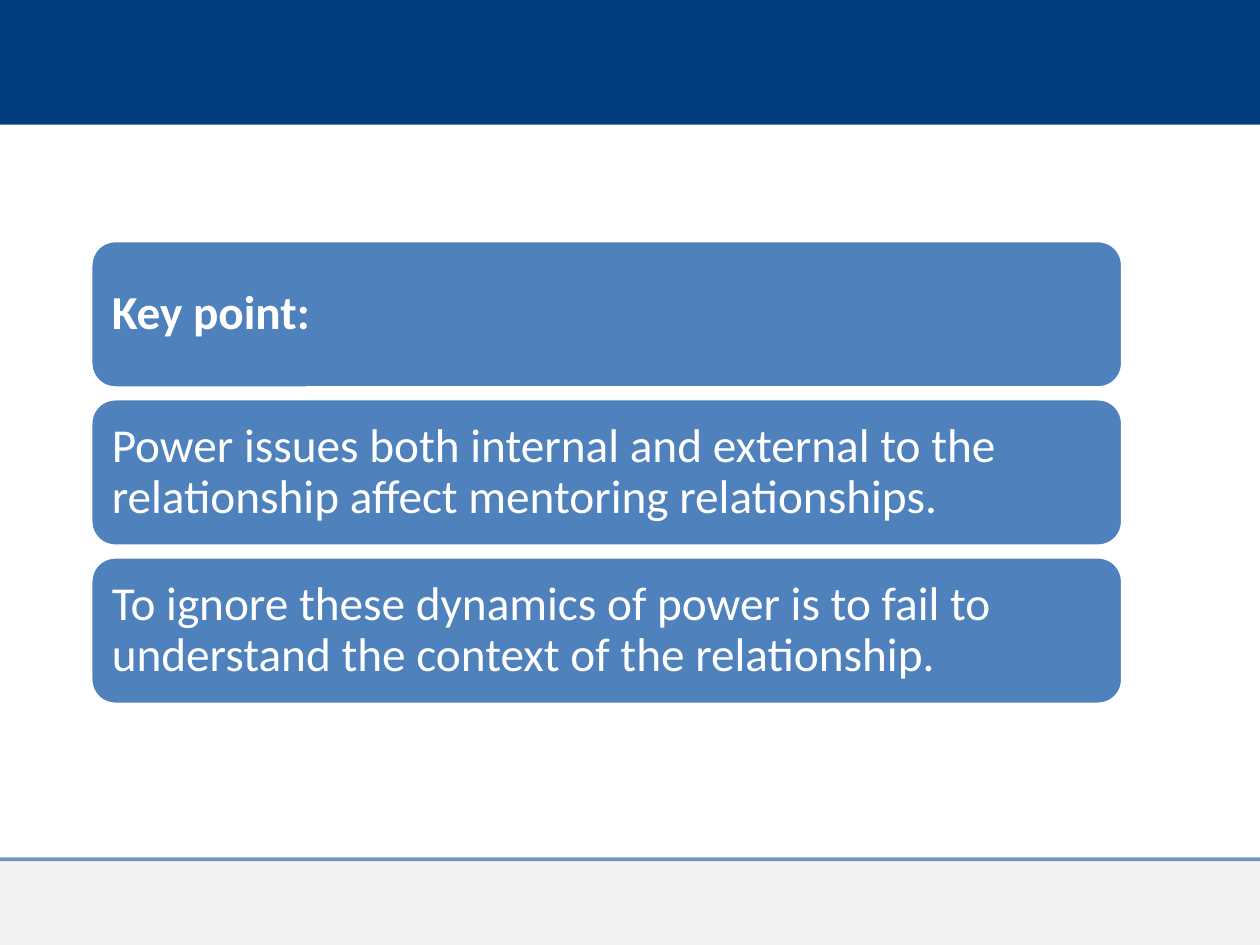
from dataclasses import dataclass

from lxml.etree import SubElement
from pptx import Presentation
from pptx.dml.color import RGBColor
from pptx.enum.shapes import MSO_CONNECTOR, MSO_SHAPE
from pptx.enum.text import MSO_ANCHOR, PP_ALIGN
from pptx.oxml.ns import qn
from pptx.util import Inches, Pt


@dataclass(frozen=True)
class Theme:
    """Colours, font and type size of the slide."""
    navy: str = "003E7E"
    grey: str = "808080"
    card: str = "4F81BD"
    white: str = "FFFFFF"
    font: str = "Calibri"
    body: int = 27


THEME = Theme()
WIDTH, HEIGHT = 10, 7.5
HEADER_H, FOOTER_Y = 0.99, 6.82
CARD_X, CARD_W, CARD_H = 0.72, 8.19, 1.17
STACK_Y, STACK_H = 1.91, 3.68
POINTS = [
    ("Key point:", True),
    ("Power issues both internal and external to the relationship "
     "affect mentoring relationships.", False),
    ("To ignore these dynamics of power is to fail to understand "
     "the context of the relationship.", False),
]


def set_opacity(fill, percent):
    """Make a solid fill partly transparent."""
    color = fill._xPr.find(qn("a:solidFill"))[0]
    SubElement(color, qn("a:alpha")).set("val", str(percent * 1000))


def add_box(s, kind, x, y, w, h, color):
    """Add a filled shape without line or shadow."""
    sp = s.shapes.add_shape(kind, Inches(x), Inches(y), Inches(w), Inches(h))
    sp.shadow.inherit = False
    sp.fill.solid()
    sp.fill.fore_color.rgb = RGBColor.from_string(color)
    sp.line.fill.background()
    return sp


def add_rule(s, y, color, width, opacity):
    """Add a horizontal line across the slide."""
    line = s.shapes.add_connector(
        MSO_CONNECTOR.STRAIGHT, 0, Inches(y), Inches(WIDTH), Inches(y))
    line.line.width = Pt(width)
    line.line.color.rgb = RGBColor.from_string(color)
    set_opacity(line.line.fill, opacity)
    SubElement(line._element.spPr, qn("a:effectLst"))


def write(sp, text, *, size=THEME.body, color=THEME.white, bold=False,
          spacing=0.9, inset=0.11):
    """Write left-aligned, vertically centred text into a shape."""
    tf = sp.text_frame
    tf.word_wrap = True
    tf.vertical_anchor = MSO_ANCHOR.MIDDLE
    tf.margin_left = tf.margin_right = Inches(inset)
    tf.margin_top = tf.margin_bottom = Inches(inset)
    p = tf.paragraphs[0]
    p.alignment = PP_ALIGN.LEFT
    p.line_spacing = spacing
    r = p.add_run()
    r.text = text
    r.font.name = THEME.font
    r.font.size = Pt(size)
    r.font.bold = bold
    r.font.color.rgb = RGBColor.from_string(color)


def add_cards(s, points):
    """Stack one rounded card per point at equal gaps."""
    pitch = (STACK_H - CARD_H) / (len(points) - 1)
    for i, (text, bold) in enumerate(points):
        sp = add_box(s, MSO_SHAPE.ROUNDED_RECTANGLE, CARD_X,
                     STACK_Y + i * pitch, CARD_W, CARD_H, THEME.card)
        sp.line.color.rgb = RGBColor.from_string(THEME.white)
        sp.line.width = Pt(2)
        write(sp, text, bold=bold)


def main():
    """Build and save the slide."""
    prs = Presentation()
    prs.slide_width, prs.slide_height = Inches(WIDTH), Inches(HEIGHT)
    s = prs.slides.add_slide(prs.slide_layouts[6])
    add_box(s, MSO_SHAPE.RECTANGLE, 0, 0, WIDTH, HEADER_H, THEME.navy)
    footer = add_box(s, MSO_SHAPE.RECTANGLE, 0, FOOTER_Y, WIDTH,
                     HEIGHT - FOOTER_Y, THEME.grey)
    set_opacity(footer.fill, 10)
    add_rule(s, FOOTER_Y, THEME.navy, 2.25, 52)
    add_cards(s, POINTS)
    prs.save("out.pptx")


if __name__ == "__main__":
    main()
